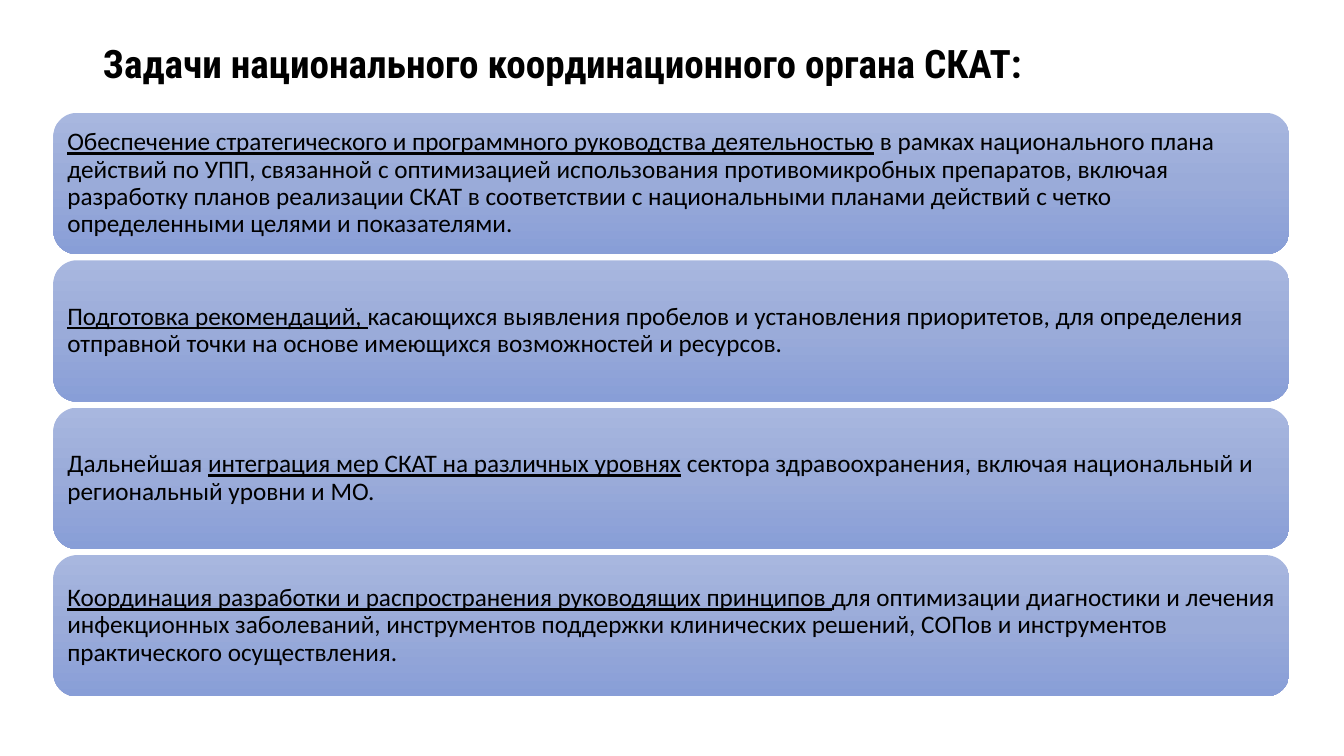
from copy import deepcopy

from pptx import Presentation
from pptx.dml.color import RGBColor
from pptx.enum.shapes import MSO_SHAPE
from pptx.enum.text import MSO_ANCHOR, MSO_AUTO_SIZE, PP_ALIGN
from pptx.oxml.ns import qn
from pptx.util import Inches, Pt

ROUNDED = MSO_SHAPE.ROUNDED_RECTANGLE
MIDDLE = MSO_ANCHOR.MIDDLE
NO_FIT = MSO_AUTO_SIZE.NONE
LEFT = PP_ALIGN.LEFT

COLORS = {"text": "000000", "top": "A8B7DF", "middle": "9AABD9", "bottom": "889ED7"}
TITLE_BOX = (0.92, 0.26, 11.5, 0.79)
TASKS_BOX = (0.53, 1.12, 12.26, 5.79)
CARD_GAP = 0.06
CARD_INSET = 0.07

TITLE = "Задачи национального координационного органа СКАТ:"
# Each task is a list of (text, underlined) spans
TASKS = [
    [("Обеспечение стратегического и программного руководства деятельностью", True),
     (" в рамках национального плана действий по УПП, связанной с оптимизацией "
      "использования противомикробных препаратов, включая разработку планов реализации "
      "СКАТ в соответствии с национальными планами действий с четко определенными "
      "целями и показателями.", False)],
    [("Подготовка рекомендаций, ", True),
     ("касающихся выявления пробелов и установления приоритетов, для определения "
      "отправной точки на основе имеющихся возможностей и ресурсов.", False)],
    [("Дальнейшая ", False),
     ("интеграция мер СКАТ на различных уровнях", True),
     (" сектора здравоохранения, включая национальный и региональный уровни и МО.", False)],
    [("Координация разработки и распространения руководящих принципов ", True),
     ("для оптимизации диагностики и лечения инфекционных заболеваний, инструментов "
      "поддержки клинических решений, СОПов и инструментов практического "
      "осуществления.", False)],
]


def color(name):
    return RGBColor.from_string(COLORS[name])


def format_paragraph(para, font_name, size, bold=False):
    para.alignment = LEFT
    para.line_spacing = 0.9
    para.font.name = font_name
    para.font.size = Pt(size)
    para.font.bold = bold
    para.font.color.rgb = color("text")


def fill_gradient(shape):
    shape.fill.gradient()
    shape.fill.gradient_angle = 270
    # Add a middle stop between the two default ones
    stop_list = shape.element.spPr.find(qn("a:gradFill")).find(qn("a:gsLst"))
    stop_list.insert(1, deepcopy(stop_list[0]))
    stops = zip(shape.fill.gradient_stops, (0, 0.5, 1), ("top", "middle", "bottom"))
    for stop, position, name in stops:
        stop.position = position
        stop.color.rgb = color(name)


def add_title(page, box):
    title = page.shapes.title
    title.left, title.top, title.width, title.height = map(Inches, box)
    frame = title.text_frame
    frame.text = TITLE
    frame.auto_size = NO_FIT
    frame.vertical_anchor = MIDDLE
    format_paragraph(frame.paragraphs[0], "Roboto Condensed", 28, bold=True)


def add_card(page, box, spans):
    card = page.shapes.add_shape(ROUNDED, *map(Inches, box))
    card.shadow.inherit = False
    card.line.fill.background()
    fill_gradient(card)
    frame = card.text_frame
    frame.word_wrap = True
    frame.vertical_anchor = MIDDLE
    frame.margin_left = frame.margin_right = Inches(CARD_INSET)
    frame.margin_top = frame.margin_bottom = Inches(CARD_INSET)
    para = frame.paragraphs[0]
    format_paragraph(para, "Calibri", 18)
    for text, underlined in spans:
        span = para.add_run()
        span.text = text
        span.font.underline = underlined


def add_tasks(page, box):
    left, top, width, height = box
    pitch = (height + CARD_GAP) / len(TASKS)
    for row, spans in enumerate(TASKS):
        add_card(page, (left, top + row * pitch, width, pitch - CARD_GAP), spans)


def main():
    deck = Presentation()
    deck.slide_width, deck.slide_height = Inches(13.33), Inches(7.5)
    page = deck.slides.add_slide(deck.slide_layouts.get_by_name("Title Only"))
    add_title(page, TITLE_BOX)
    add_tasks(page, TASKS_BOX)
    deck.save("out.pptx")


if __name__ == "__main__":
    main()
